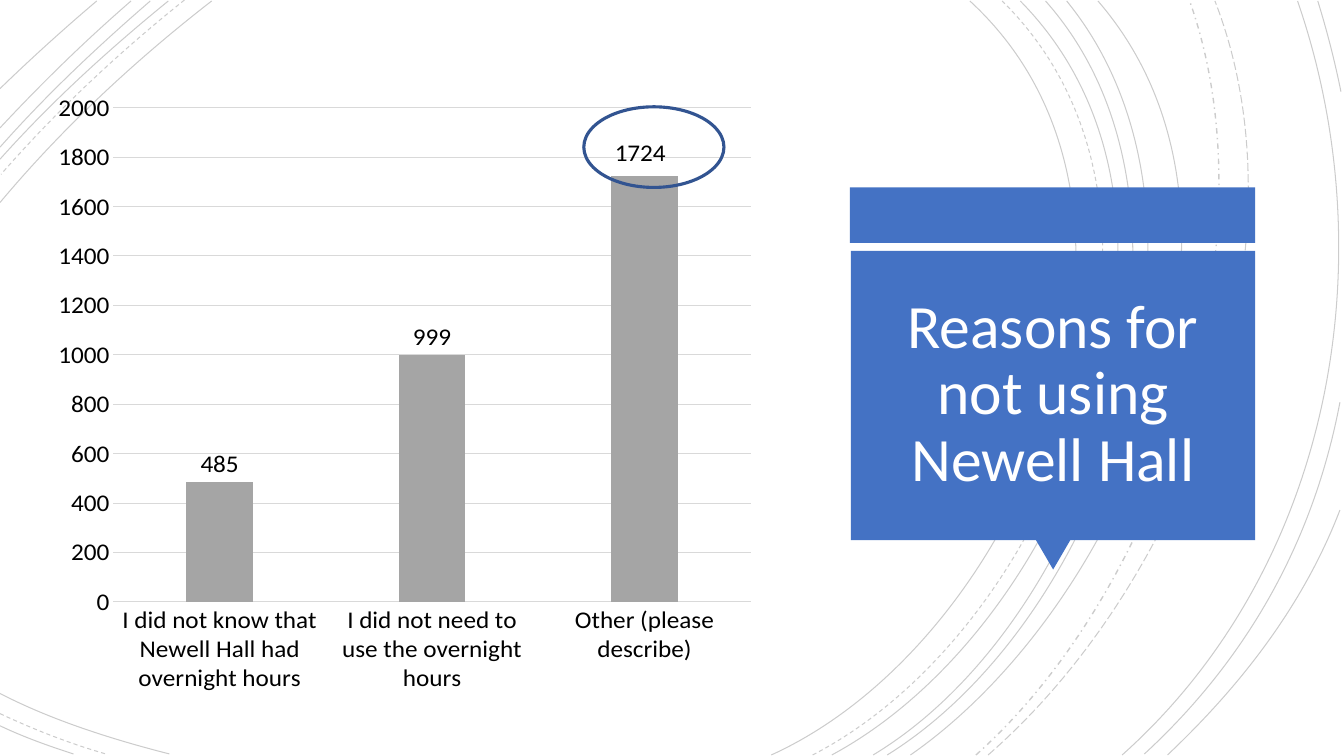
from lxml import etree
from pptx import Presentation
from pptx import util as u
from pptx.chart.data import CategoryChartData
from pptx.dml.color import RGBColor
from pptx.enum import chart as ch, dml, shapes, text
from pptx.oxml import parse_xml
from pptx.oxml.ns import nsdecls, qn

BLUE = RGBColor(0x44, 0x72, 0xC4)
DARK_BLUE = RGBColor(0x32, 0x54, 0x91)
GRAY = RGBColor(0xA5, 0xA5, 0xA5)
GRID = RGBColor(0xD9, 0xD9, 0xD9)
BLACK = RGBColor(0, 0, 0)
WHITE = RGBColor(0xFF, 0xFF, 0xFF)

SOLID, DASH = dml.MSO_LINE.SOLID, dml.MSO_LINE.DASH
DASH_DOT, LONG_DASH = dml.MSO_LINE.DASH_DOT, dml.MSO_LINE.LONG_DASH
AXIS_FONT = {"size": u.Pt(18), "name": "Calibri"}
TITLE_FONT = {"size": u.Pt(44), "name": "Calibri"}

# Cubic curves: start, two controls, end, each as x, y
ARCS = [
    # Sweep left of the title
    ((7.65, 7.49, 10.16, 6.35, 11.88, 2.09, 9.62, 0.01), SOLID),
    ((8.06, 7.49, 10.46, 6.25, 12.08, 2.12, 9.94, 0.01), DASH),
    ((8.25, 7.49, 10.61, 6.22, 12.21, 2.13, 10.12, 0.01), SOLID),
    ((8.66, 7.49, 10.87, 6.16, 12.21, 2.08, 10.37, 0.01), SOLID),
    ((8.8, 7.49, 11, 6.12, 12.33, 2.16, 10.58, 0.01), SOLID),
    ((9.03, 7.49, 11.13, 6.03, 12.78, 2.2, 10.89, 0.01), SOLID),
    ((9.68, 7.49, 11.54, 5.83, 12.65, 2.41, 11.8, 0.01), DASH_DOT),
    ((9.8, 7.49, 11.73, 5.81, 13.02, 2.51, 12.05, 0.01), LONG_DASH),
    # Right edge
    ((11.13, 7.49, 13.2, 5.64, 13.76, 2.59, 12.87, 0.01), SOLID),
    ((11.35, 7.48, 12.38, 6.53, 13.03, 5.36, 13.29, 3.99), SOLID),
    ((13.3, 0.91, 13.24, 0.61, 13.16, 0.3, 13.07, 0.01), SOLID),
    ((11.58, 7.49, 12.31, 6.8, 12.93, 6, 13.29, 5.06), SOLID),
    # Bottom left corner
    ((0, 6.88, 0.52, 7.15, 1.13, 7.34, 1.68, 7.48), SOLID),
    ((0, 7.08, 0.34, 7.24, 0.7, 7.38, 1.05, 7.48), DASH),
    ((0, 7.2, 0.23, 7.31, 0.48, 7.4, 0.73, 7.48), SOLID),
    # Top left corner
    ((2.1, 0.01, 1.34, 0.6, 0.62, 1.27, 0, 2.01), SOLID),
    ((1.83, 0, 1.18, 0.52, 0.56, 1.1, 0.01, 1.73), DASH),
    ((1.67, 0.01, 1.08, 0.49, 0.51, 1.01, 0, 1.58), SOLID),
    ((1.49, 0.01, 0.97, 0.46, 0.46, 0.94, 0, 1.46), SOLID),
    ((1.3, 0.01, 0.84, 0.41, 0.41, 0.83, 0, 1.27), SOLID),
    ((0.96, 0.01, 0.63, 0.29, 0.31, 0.58, 0, 0.88), SOLID),
]


def set_font(font, values, color):
    for name, value in values.items():
        setattr(font, name, value)
    font.color.rgb = color


def add_arcs(slide, x, y, arcs):
    for curve, dash in arcs:
        lengths = [u.Inches(v) for v in curve]
        start, *rest = zip(lengths[::2], lengths[1::2])
        builder = slide.shapes.build_freeform(*start)
        builder.add_line_segments(rest, close=False)
        sp = builder.convert_to_shape(u.Inches(x), u.Inches(y))
        # Turn the three segments into one cubic curve
        outline = sp.element.xpath(".//a:path")[0]
        cubic = etree.SubElement(outline, qn("a:cubicBezTo"))
        for segment in outline.findall(qn("a:lnTo")):
            cubic.append(segment[0])
            outline.remove(segment)
        sp.shadow.inherit = False
        sp.fill.background()
        sp.line.color.rgb = BLACK
        sp.line.width = u.Pt(1 if dash == DASH_DOT else 0.75)
        sp.line.dash_style = dash
        # 20% opacity
        color = sp.element.xpath(".//a:ln//a:srgbClr")[0]
        etree.SubElement(color, qn("a:alpha")).set("val", "20000")


def add_preset(slide, kind, x, y, w, h, fill=None, line=None):
    sp = slide.shapes.add_shape(kind, *map(u.Inches, (x, y, w, h)))
    sp.shadow.inherit = False
    if fill is None:
        sp.fill.background()
    else:
        sp.fill.solid()
        sp.fill.fore_color.rgb = fill
    if line is None:
        sp.line.fill.background()
    else:
        sp.line.color.rgb = line
        sp.line.width = u.Pt(2.25)
    return sp


def add_title_callout(slide, x, y, w, h, title):
    rect = shapes.MSO_SHAPE.RECTANGLE
    band_h, body_y, tip_w, tip_h = 0.55, 0.63, 0.35, 0.3
    body_h = h - body_y - tip_h

    # Band, pointer and body
    add_preset(slide, rect, x, y, w, band_h, BLUE)
    tip = add_preset(slide, shapes.MSO_SHAPE.ISOSCELES_TRIANGLE,
                     x + 1.84, y + h - tip_h - 0.01, tip_w, tip_h, BLUE)
    tip.rotation = 180
    add_preset(slide, rect, x + 0.01, y + body_y, w - 0.01, body_h, BLUE)

    # Title text
    box = slide.shapes.add_textbox(*map(u.Inches, (
        x + 0.1, y + body_y + 0.08, w - 0.19, body_h - 0.18)))
    tf = box.text_frame
    tf.word_wrap = True
    tf.vertical_anchor = text.MSO_ANCHOR.MIDDLE
    p = tf.paragraphs[0]
    p.alignment = text.PP_ALIGN.CENTER
    p.line_spacing = 0.9
    r = p.add_run()
    r.text = title
    set_font(r.font, TITLE_FONT, WHITE)


def set_layout(parent, index, modes, **percents):
    """Place a chart part by percentages of the chart's size."""
    for old in parent.findall(qn("c:layout")):
        parent.remove(old)
    values = modes | {k: round(v / 100, 4) for k, v in percents.items()}
    items = "".join(f'<c:{k} val="{v}"/>' for k, v in values.items())
    parent.insert(index, parse_xml(
        f'<c:layout {nsdecls("c")}><c:manualLayout>{items}</c:manualLayout></c:layout>'))


def add_reasons_chart(slide, x, y, w, h):
    data = CategoryChartData(number_format="###0")
    data.categories = ["I did not know that Newell Hall had overnight hours",
                       "I did not need to use the overnight hours",
                       "Other (please describe)"]
    data.add_series("Series 1", (485, 999, 1724))
    chart = slide.shapes.add_chart(ch.XL_CHART_TYPE.COLUMN_CLUSTERED,
                                   *map(u.Inches, (x, y, w, h)), data).chart
    chart.has_legend = chart.has_title = False
    set_font(chart.font, AXIS_FONT, BLACK)
    set_layout(chart.element.xpath("c:chart/c:plotArea")[0], 0,
               {"layoutTarget": "inner", "xMode": "edge", "yMode": "edge"},
               x=8.2, y=3.5, w=91.6, h=86.1)

    # Columns and labels
    plot = chart.plots[0]
    plot.vary_by_categories = False
    plot.gap_width, plot.overlap = 219, -27
    series = plot.series[0]
    series.format.fill.solid()
    series.format.fill.fore_color.rgb = GRAY
    labels = series.data_labels
    labels.show_value = True
    labels.number_format, labels.number_format_is_linked = "###0", False
    top_label = series.points[2].data_label
    for label in (labels, top_label):
        label.position = ch.XL_LABEL_POSITION.OUTSIDE_END
        set_font(label.font, AXIS_FONT, BLACK)
    # The highest value sits a little up and left
    set_layout(labels._element.xpath("c:dLbl")[0], 1, {}, x=-0.6, y=-0.8)

    # Axes
    cat, val = chart.category_axis, chart.value_axis
    for axis in (cat, val):
        axis.major_tick_mark = axis.minor_tick_mark = ch.XL_TICK_MARK.NONE
        set_font(axis.tick_labels.font, AXIS_FONT, BLACK)
    val.minimum_scale, val.maximum_scale, val.major_unit = 0, 2000, 200
    val.format.line.fill.background()
    for line in (cat.format.line, val.major_gridlines.format.line):
        line.color.rgb = GRID
        line.width = u.Pt(0.75)

    # Ring around the highest value
    add_preset(slide, shapes.MSO_SHAPE.OVAL, x + 5.23, y + 0.19, 1.39, 0.8,
               line=DARK_BLUE)


def main():
    prs = Presentation()
    prs.slide_width, prs.slide_height = u.Inches(13.33), u.Inches(7.5)
    slide = prs.slides.add_slide(prs.slide_layouts[6])
    add_arcs(slide, 0, 0, ARCS)
    add_title_callout(slide, 8.43, 1.86, 4.02, 3.8, "Reasons for not using Newell Hall")
    add_reasons_chart(slide, 0.56, 0.87, 6.9, 6)
    prs.save("out.pptx")


if __name__ == "__main__":
    main()
